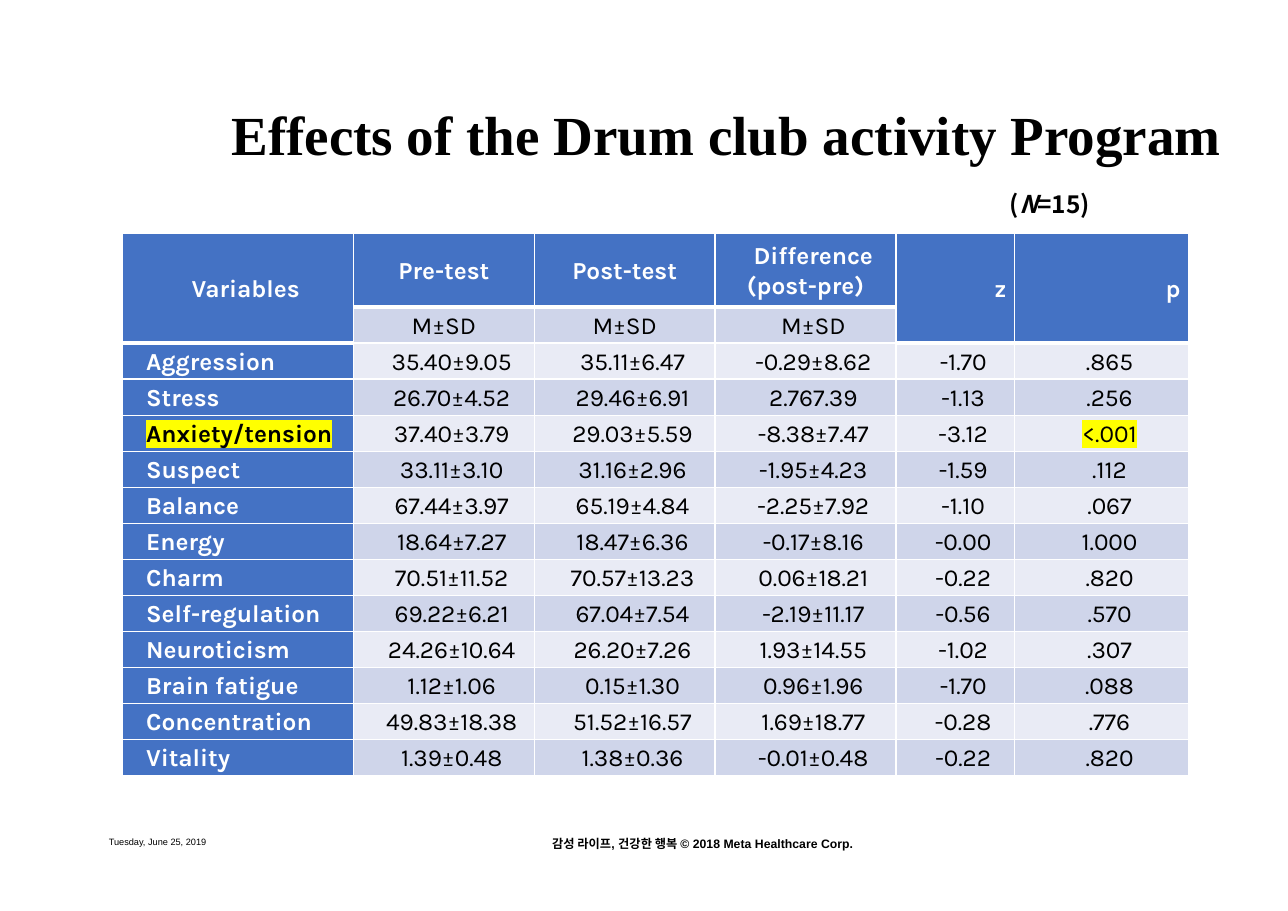
from lxml import etree
from pptx import Presentation
from pptx.dml.color import RGBColor
from pptx.enum import text as t
from pptx.oxml import ns
from pptx.util import Cm, Pt

COLORS = {"ink": "000000", "white": "FFFFFF", "head": "4472C4",
          "dark_band": "CFD5EA", "light_band": "E9EBF5", "marker": "FFFF00"}
LEFT, CENTER, RIGHT = t.PP_ALIGN.LEFT, t.PP_ALIGN.CENTER, t.PP_ALIGN.RIGHT
INDENT = Cm(0.36)

COLUMN_WIDTHS = [5.33, 4.17, 4.17, 4.17, 2.74, 4.01]
# Each heading: column, alignment, and its lines as (text, indented)
HEADINGS = [
    (0, CENTER, [("Variables", True)]),
    (1, CENTER, [("Pre-test", False)]),
    (2, CENTER, [("Post-test", False)]),
    (3, CENTER, [("Difference", True), ("(post-pre)", False)]),
    (4, RIGHT, [("z", False)]),
    (5, RIGHT, [("p", False)]),
]
RESULTS = [
    ("Aggression", "35.40±9.05", "35.11±6.47", "-0.29±8.62", "-1.70", ".865"),
    ("Stress", "26.70±4.52", "29.46±6.91", "2.767.39", "-1.13", ".256"),
    ("Anxiety/tension", "37.40±3.79", "29.03±5.59", "-8.38±7.47", "-3.12", "<.001"),
    ("Suspect", "33.11±3.10", "31.16±2.96", "-1.95±4.23", "-1.59", ".112"),
    ("Balance", "67.44±3.97", "65.19±4.84", "-2.25±7.92", "-1.10", ".067"),
    ("Energy", "18.64±7.27", "18.47±6.36", "-0.17±8.16", "-0.00", "1.000"),
    ("Charm", "70.51±11.52", "70.57±13.23", "0.06±18.21", "-0.22", ".820"),
    ("Self-regulation", "69.22±6.21", "67.04±7.54", "-2.19±11.17", "-0.56", ".570"),
    ("Neuroticism", "24.26±10.64", "26.20±7.26", "1.93±14.55", "-1.02", ".307"),
    ("Brain fatigue", "1.12±1.06", "0.15±1.30", "0.96±1.96", "-1.70", ".088"),
    ("Concentration", "49.83±18.38", "51.52±16.57", "1.69±18.77", "-0.28", ".776"),
    ("Vitality", "1.39±0.48", "1.38±0.36", "-0.01±0.48", "-0.22", ".820"),
]
HIGHLIGHTED = {"Anxiety/tension", "<.001"}


def rgb(name):
    return RGBColor.from_string(COLORS[name])


def style(paragraph, face, size, bold=False, color="ink"):
    font = paragraph.font
    font.name, font.size, font.bold = face, Pt(size), bold
    font.color.rgb = rgb(color)


def set_indent(paragraph, length):
    """Indent the first line only."""
    properties = paragraph._p.get_or_add_pPr()
    properties.set("marL", "0")
    properties.set("indent", str(int(length)))


def highlight(run):
    marker = etree.SubElement(run._r.get_or_add_rPr(), ns.qn("a:highlight"))
    etree.SubElement(marker, ns.qn("a:srgbClr"), val=COLORS["marker"])


def rule_below(cell):
    """Draw the thick white line under a heading cell."""
    line = etree.SubElement(cell._tc.get_or_add_tcPr(), ns.qn("a:lnB"), w=str(Pt(3)))
    fill = etree.SubElement(line, ns.qn("a:solidFill"))
    etree.SubElement(fill, ns.qn("a:srgbClr"), val=COLORS["white"])


def fill_cell(cell, lines, fill, align=CENTER, bold=False, color="ink"):
    cell.margin_left = cell.margin_right = Cm(0.19)
    cell.margin_top = cell.margin_bottom = 0
    cell.vertical_anchor = t.MSO_ANCHOR.MIDDLE
    cell.fill.solid()
    cell.fill.fore_color.rgb = rgb(fill)
    frame = cell.text_frame
    frame.text = "\n".join(words for words, _ in lines)
    for paragraph, (words, indented) in zip(frame.paragraphs, lines):
        paragraph.alignment = align
        paragraph.line_spacing = 1.07
        if indented:
            set_indent(paragraph, INDENT)
        else:
            paragraph.space_after = Pt(3)
        marked = words in HIGHLIGHTED
        style(paragraph, "Karla", 16, bold, "ink" if marked else color)
        if marked:
            highlight(paragraph.runs[0])


def add_title(slide, left, top, width, height):
    title = slide.shapes.title
    title.left, title.top, title.width, title.height = left, top, width, height
    frame = title.text_frame
    frame.text = "Effects of the Drum club activity Program"
    frame.word_wrap = False
    frame.auto_size = t.MSO_AUTO_SIZE.SHAPE_TO_FIT_TEXT
    frame.vertical_anchor = t.MSO_ANCHOR.TOP
    frame.paragraphs[0].alignment = LEFT
    style(frame.paragraphs[0], "Times New Roman", 36, True)


def add_results_table(slide, left, top, width, height):
    table = slide.shapes.add_table(len(RESULTS) + 2, len(COLUMN_WIDTHS),
                                   left, top, width, height).table
    table.horz_banding = False
    for column, column_width in zip(table.columns, COLUMN_WIDTHS):
        column.width = Cm(column_width)
    for row in table.rows:
        row.height = Cm(0.83)
    table.rows[0].height = Cm(1.7)

    for col, align, lines in HEADINGS:
        cell = table.cell(0, col)
        rule_below(cell)
        fill_cell(cell, lines, "head", align, True, "white")
        below = table.cell(1, col)
        if col in (1, 2, 3):
            fill_cell(below, [("M±SD", col == 3)], "dark_band")
        else:
            rule_below(below)
            cell.merge(below)

    for row, (variable, *values) in enumerate(RESULTS, start=2):
        fill_cell(table.cell(row, 0), [(variable, True)], "head", LEFT, True, "white")
        band = "dark_band" if row % 2 else "light_band"
        for col, value in enumerate(values, start=1):
            fill_cell(table.cell(row, col), [(value, True)], band)


def add_sample_size(slide, left, top, width, height):
    frame = slide.shapes.add_textbox(left, top, width, height).text_frame
    frame.word_wrap = True
    frame.vertical_anchor = t.MSO_ANCHOR.MIDDLE
    paragraph = frame.paragraphs[0]
    for words in ("(", "N", "=15)"):
        run = paragraph.add_run()
        run.text = words
        run.font.italic = words == "N"
    set_indent(paragraph, Cm(2.97))
    style(paragraph, "Noto Sans CJK KR", 16, True)


def add_small_print(slide, words, size, bold, left, top, width, height):
    frame = slide.shapes.add_textbox(left, top, width, height).text_frame
    frame.word_wrap = True
    frame.margin_left = frame.margin_right = frame.margin_top = frame.margin_bottom = 0
    frame.vertical_anchor = t.MSO_ANCHOR.MIDDLE
    frame.text = words
    style(frame.paragraphs[0], "Arial", size, bold)


def main():
    deck = Presentation()
    deck.slide_width, deck.slide_height = Cm(29.7), Cm(21)
    slide = deck.slides.add_slide(deck.slide_layouts[5])
    add_small_print(slide, "감성 라이프, 건강한 행복 © 2018 Meta Healthcare Corp.", 8, True,
                    Cm(12.73), Cm(19.28), Cm(16), Cm(0.33))
    add_small_print(slide, "Tuesday, June 25, 2019", 6, False,
                    Cm(2.51), Cm(19.2), Cm(6.88), Cm(0.41))
    add_title(slide, Cm(5.08), Cm(2.18), Cm(23.6), Cm(1.8))
    add_results_table(slide, Cm(2.82), Cm(5.38), Cm(24.56), Cm(12.55))
    add_sample_size(slide, Cm(20.07), Cm(4.22), Cm(9.4), Cm(0.95))
    deck.save("out.pptx")


if __name__ == "__main__":
    main()
